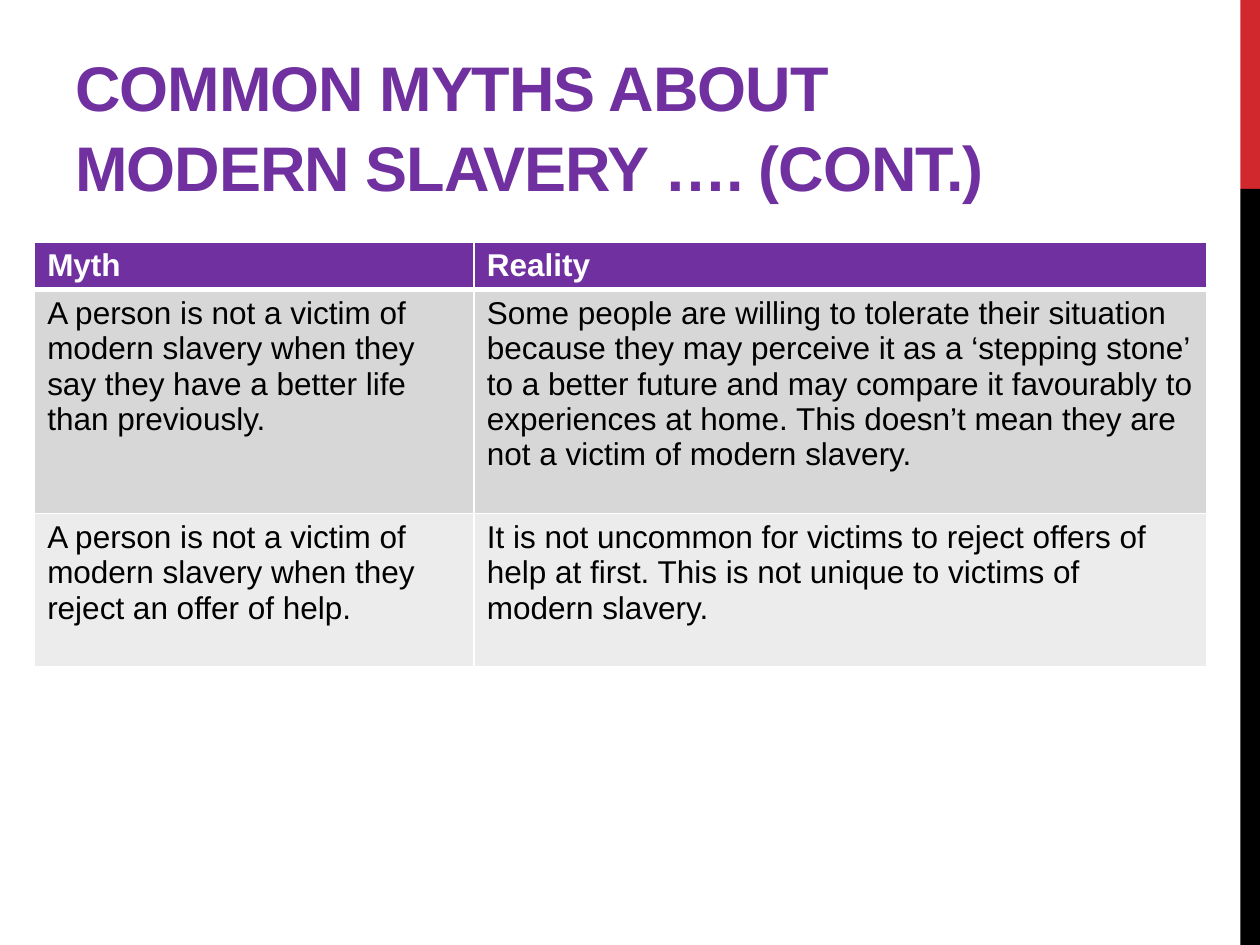
from dataclasses import dataclass

from lxml.etree import SubElement
from pptx import Presentation
from pptx.dml.color import RGBColor
from pptx.enum.shapes import MSO_SHAPE
from pptx.enum.text import MSO_ANCHOR
from pptx.oxml.ns import qn
from pptx.util import Pt


@dataclass(frozen=True)
class Theme:
    font: str = "Arial"
    purple: str = "7030A0"
    red: str = "D1282E"
    black: str = "000000"
    white: str = "FFFFFF"
    dark_band: str = "D7D7D7"
    light_band: str = "ECECEC"
    title_size: float = 36
    table_size: float = 18


@dataclass(frozen=True)
class Frame:
    left: float
    top: float
    width: float
    height: float

    def lengths(self) -> list:
        return [Pt(value) for value in (self.left, self.top, self.width, self.height)]


@dataclass(frozen=True)
class TableRow:
    height: float
    fill: str
    color: str
    bold: bool
    bottom_border: float
    texts: tuple[str, str]


THEME = Theme()
TITLE = "COMMON MYTHS ABOUT MODERN SLAVERY …. (CONT.)"
COLUMN_WIDTHS = (251.2, 418.8)
ROWS = (
    TableRow(27.3, THEME.purple, THEME.white, True, 3, ("Myth", "Reality")),
    TableRow(128, THEME.dark_band, THEME.black, False, 1, (
        "A person is not a victim of modern slavery when they say they have "
        "a better life than previously.",
        "Some people are willing to tolerate their situation because they may "
        "perceive it as a ‘stepping stone’ to a better future and may compare it "
        "favourably to experiences at home. This doesn’t mean they are not a "
        "victim of modern slavery.",
    )),
    TableRow(87.5, THEME.light_band, THEME.black, False, 1, (
        "A person is not a victim of modern slavery when they reject an offer of help.",
        "It is not uncommon for victims to reject offers of help at first. "
        "This is not unique to victims of modern slavery.",
    )),
)


def write(text_frame, text: str, size: float, color: str, bold: bool):
    """Put one formatted span in the first paragraph and return the span."""
    span = text_frame.paragraphs[0].add_run()
    span.text = text
    formats = {"name": THEME.font, "size": Pt(size), "bold": bold}
    for name, value in formats.items():
        setattr(span.font, name, value)
    span.font.color.rgb = RGBColor.from_string(color)
    return span


def draw_bar(page, frame: Frame, color: str) -> None:
    bar = page.shapes.add_shape(MSO_SHAPE.RECTANGLE, *frame.lengths())
    bar.shadow.inherit = False
    bar.fill.solid()
    bar.fill.fore_color.rgb = RGBColor.from_string(color)
    bar.line.fill.background()


def draw_title(page, frame: Frame) -> None:
    box = page.shapes.add_textbox(*frame.lengths())
    formats = {"word_wrap": True, "vertical_anchor": MSO_ANCHOR.BOTTOM}
    for name, value in formats.items():
        setattr(box.text_frame, name, value)
    span = write(box.text_frame, TITLE, THEME.title_size, THEME.purple, True)
    span.font._element.set("spc", "-60")
    box.text_frame.paragraphs[0].line_spacing = 1.05


def add_border(cell, side: str, width: float) -> None:
    properties = cell._tc.get_or_add_tcPr()
    line = SubElement(properties, qn(f"a:{side}"), w=str(Pt(width)))
    fill = SubElement(line, qn("a:solidFill"))
    SubElement(fill, qn("a:srgbClr"), val=THEME.white)


def draw_table(page, left: float, top: float) -> None:
    frame = Frame(left, top, sum(COLUMN_WIDTHS), sum(row.height for row in ROWS))
    table = page.shapes.add_table(len(ROWS), len(COLUMN_WIDTHS), *frame.lengths()).table
    table.horz_banding = False
    for column, width in zip(table.columns, COLUMN_WIDTHS):
        column.width = Pt(width)
    top_border = 1
    for table_row, row in zip(table.rows, ROWS):
        table_row.height = Pt(row.height)
        borders = {"lnL": 1, "lnR": 1, "lnT": top_border, "lnB": row.bottom_border}
        for cell, text in zip(table_row.cells, row.texts):
            # Borders come before the fill in the cell's XML
            for side, width in borders.items():
                add_border(cell, side, width)
            cell.fill.solid()
            cell.fill.fore_color.rgb = RGBColor.from_string(row.fill)
            write(cell.text_frame, text, THEME.table_size, row.color, row.bold)
        top_border = row.bottom_border


def main() -> None:
    deck = Presentation()
    deck.slide_width, deck.slide_height = Pt(720), Pt(540)
    page = deck.slides.add_slide(deck.slide_layouts[6])

    # Side bars
    draw_bar(page, Frame(708.75, 0, 11.25, 108), THEME.red)
    draw_bar(page, Frame(708.75, 108, 11.25, 432), THEME.black)

    # Myths and realities
    draw_table(page, 19.8, 138.2)

    # Heading
    draw_title(page, Frame(36, 12, 600, 108))

    deck.save("out.pptx")


if __name__ == "__main__":
    main()
